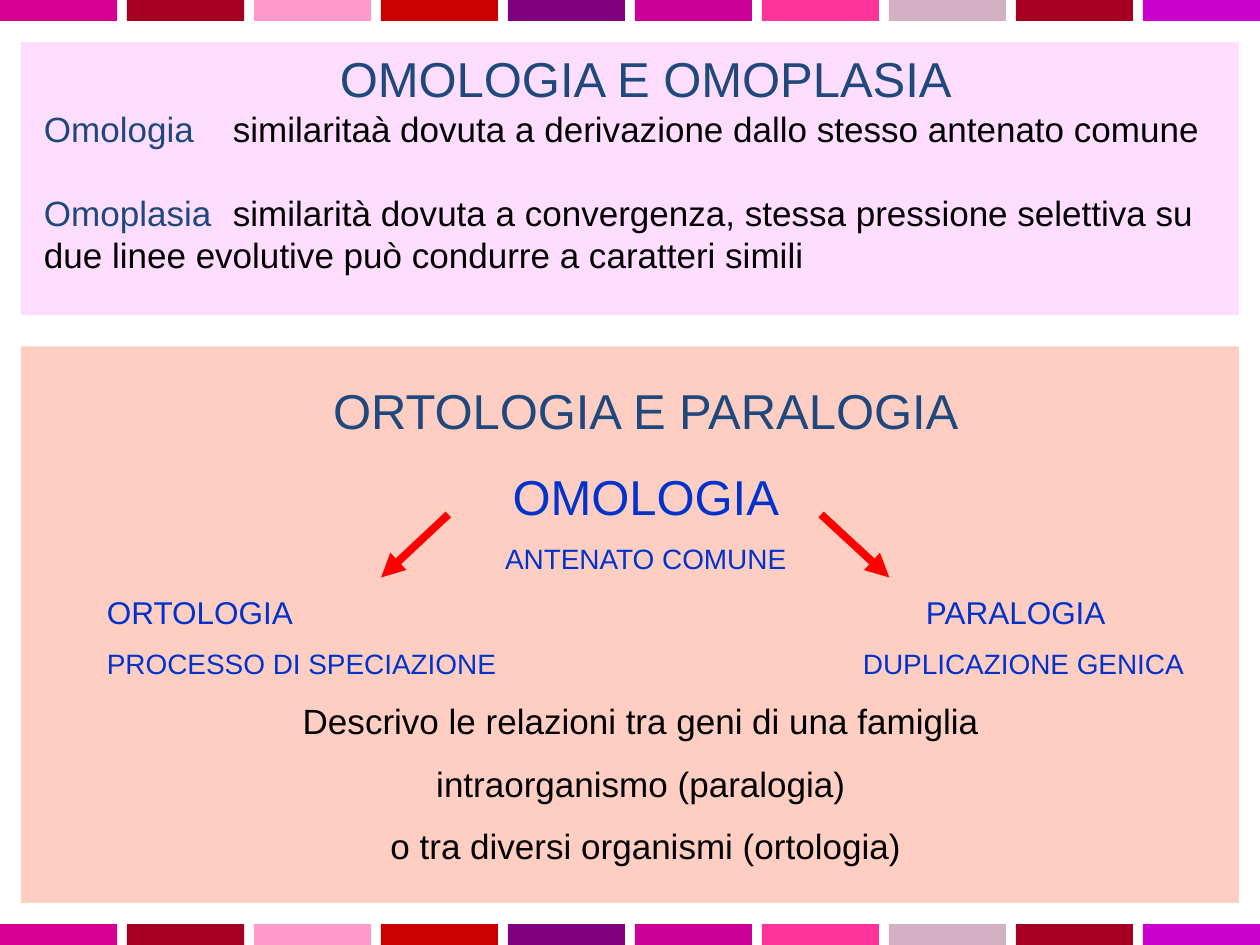
from lxml import etree
from pptx import Presentation
from pptx.dml.color import RGBColor
from pptx.enum.shapes import MSO_CONNECTOR, MSO_SHAPE
from pptx.enum.text import PP_ALIGN
from pptx.oxml.ns import qn
from pptx.util import Inches, Pt

RECT = MSO_SHAPE.RECTANGLE
LINE = MSO_CONNECTOR.STRAIGHT
LEFT, MID = PP_ALIGN.LEFT, PP_ALIGN.CENTER
COLS, ROWS = 60, 45

HUES = {
    "pink": "FFDDFF", "peach": "FFCEC3", "navy": "1F497D",
    "blue": "0033CC", "black": "000000", "red": "FF0000",
}
BANDS = ["D60093", "A50021", "FE9ACC", "CC0000", "800080",
         "CC0099", "FF3399", "D3B1C2", "A50021", "CC00CC"]


class Deck:
    font = "Arial"

    def __init__(self):
        self.file = Presentation()
        self.file.slide_width = Inches(10)
        self.file.slide_height = Inches(7.5)
        self.slide = self.file.slides.add_slide(self.file.slide_layouts[6])

    def grid(self, *spots):
        units = (self.file.slide_width / COLS, self.file.slide_height / ROWS)
        return [round(n * units[i % 2]) for i, n in enumerate(spots)]

    def block(self, spots, hue):
        shape = self.slide.shapes.add_shape(RECT, *self.grid(*spots))
        shape.shadow.inherit = False
        shape.fill.solid()
        shape.fill.fore_color.rgb = RGBColor.from_string(hue)
        shape.line.fill.background()

    def bands(self, row, wide=5.58):
        step = (COLS - wide) / (len(BANDS) - 1)
        for i, hue in enumerate(BANDS):
            self.block((i * step, row, wide, 1), hue)

    def arrow(self, *spots):
        line = self.slide.shapes.add_connector(LINE, *self.grid(*spots))
        line.line.color.rgb = RGBColor.from_string(HUES["red"])
        line.line.width = Pt(4.5)
        etree.SubElement(line.line._get_or_add_ln(), qn("a:tailEnd"), type="triangle")
        etree.SubElement(line._element.spPr, qn("a:effectLst"))

    def text(self, spots, rows):
        frame = self.slide.shapes.add_textbox(*self.grid(*spots)).text_frame
        frame.word_wrap = True
        frame.text = "\n".join("".join(words for words, _ in row[0]) for row in rows)
        for para, row in zip(frame.paragraphs, rows):
            self.style(para, *row)

    def style(self, para, parts, size, gap, align=MID, tabs=()):
        para.text = ""
        para.alignment = align
        para.space_before = Pt(gap)
        for words, hue in parts:
            run = para.add_run()
            run.text = words
            run.font.name = self.font
            run.font.size = Pt(size)
            run.font.color.rgb = RGBColor.from_string(HUES[hue])
        if tabs:
            stops = etree.SubElement(para._p.get_or_add_pPr(), qn("a:tabLst"))
            for stop in tabs:
                etree.SubElement(stops, qn("a:tab"), pos=str(Inches(stop)), algn="l")


def main():
    deck = Deck()
    deck.block((1, 16.5, 58, 26.5), HUES["peach"])
    deck.block((1, 2, 58, 13), HUES["pink"])
    deck.text((1.5, 2, 58.5, 40.5), [
        ([("OMOLOGIA E OMOPLASIA", "navy")], 28, 0),
        ([("Omologia \t", "navy"),
          ("similaritaà dovuta a derivazione dallo stesso antenato comune", "black")],
         20, 0, LEFT, [1.5]),
        ([("Omoplasia \t", "navy"),
          ("similarità dovuta a convergenza, stessa pressione selettiva su "
           "due linee evolutive può condurre a caratteri simili", "black")],
         20, 24, LEFT, [1.5]),
        ([("ORTOLOGIA E PARALOGIA", "navy")], 28, 60),
        ([("OMOLOGIA", "blue")], 28, 16),
        ([("ANTENATO COMUNE", "blue")], 16, 9),
        ([("\tORTOLOGIA\tPARALOGIA", "blue")], 18, 10, LEFT, [0.5, 7]),
        ([("\tPROCESSO DI SPECIAZIONE\tDUPLICAZIONE GENICA", "blue")],
         16, 9, LEFT, [0.5, 6.5]),
        ([("Descrivo le relazioni tra geni di una famiglia ", "black")], 20, 11.5),
        ([("intraorganismo (paralogia) ", "black")], 20, 11.5),
        ([("o tra diversi organismi (ortologia)", "black")], 20, 11.5),
    ])
    deck.arrow(21.35, 24.5, 18.15, 27.5)
    deck.arrow(39.1, 24.5, 42.35, 27.5)
    for row in (0, ROWS - 1):
        deck.bands(row)
    deck.file.save("out.pptx")


if __name__ == "__main__":
    main()
